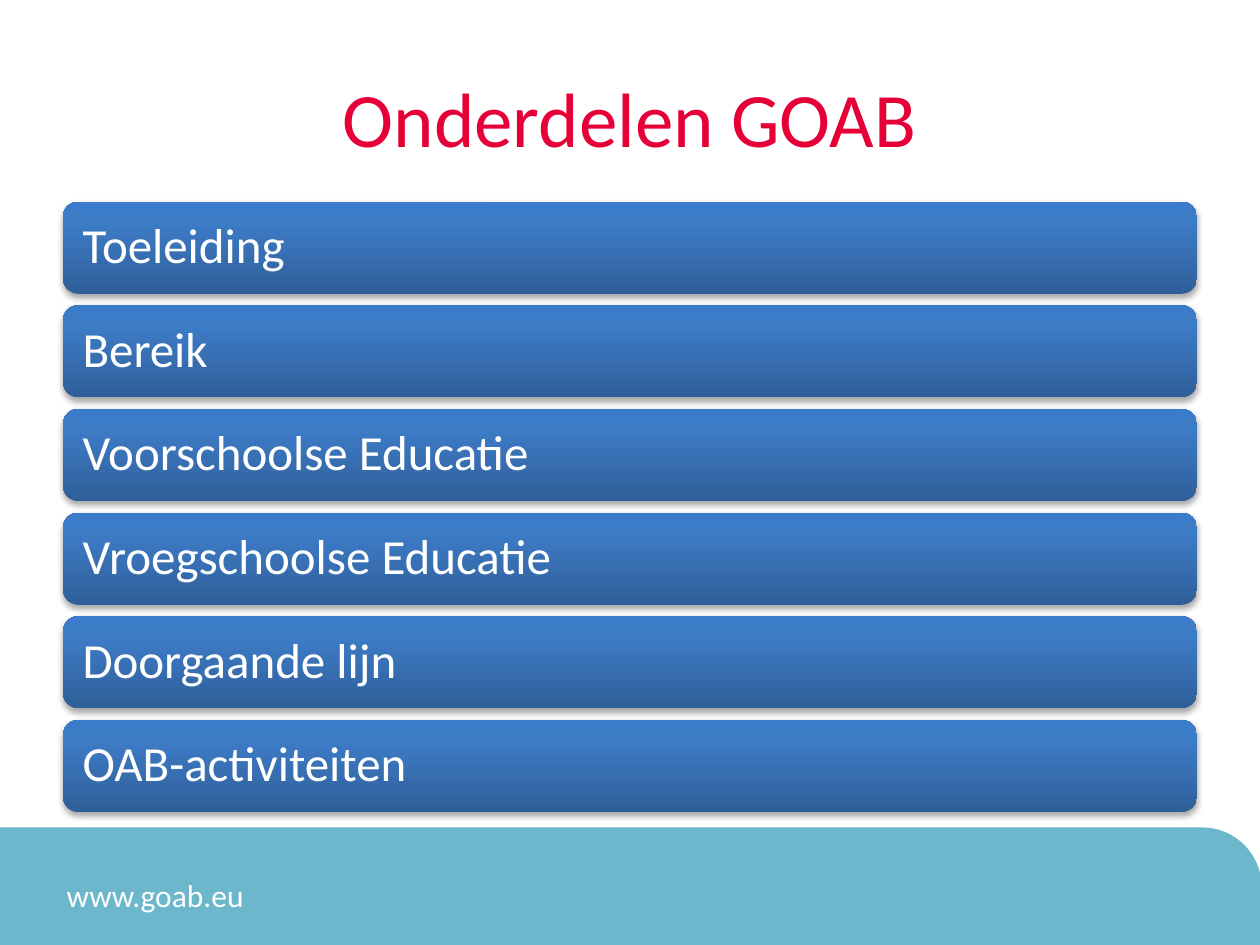
"""Build the slide that lists the parts of GOAB as stacked bars."""
from copy import deepcopy
from dataclasses import dataclass

from lxml import etree
from pptx import Presentation
from pptx.dml import color
from pptx.enum import shapes, text
from pptx.oxml import ns
from pptx.util import Pt

FONT = "Calibri"
WHITE, RED, TEAL = "FFFFFF", "E60038", "6CB7CB"
GRADIENT = ((0, "2F5F99"), (0.8, "3D7CC7"), (1, "3A7CCB"))
PARTS = ("Toeleiding", "Bereik", "Voorschoolse Educatie",
         "Vroegschoolse Educatie", "Doorgaande lijn", "OAB-activiteiten")
BAR_TOP, BAR_PITCH, BAR_HEIGHT = 115.2, 59.24, 52.7


@dataclass
class Box:
    left: float
    top: float
    width: float
    height: float

    def emu(self) -> tuple:
        return tuple(Pt(v) for v in (self.left, self.top, self.width, self.height))


@dataclass
class Label:
    words: str
    size: float
    hue: str
    align: text.PP_ALIGN = text.PP_ALIGN.LEFT
    anchor: text.MSO_ANCHOR = text.MSO_ANCHOR.MIDDLE
    inset: float = 7.2
    spacing: float = 1.0


def rgb(value: str) -> color.RGBColor:
    return color.RGBColor.from_string(value)


def write(sp, label: Label) -> None:
    tf = sp.text_frame
    tf.word_wrap = True
    tf.vertical_anchor = label.anchor
    tf.margin_left = tf.margin_right = Pt(label.inset)
    p = tf.paragraphs[0]
    p.text = label.words
    p.alignment = label.align
    p.line_spacing = label.spacing
    p.font.name, p.font.size = FONT, Pt(label.size)
    p.font.color.rgb = rgb(label.hue)


def add_text(s, box: Box, label: Label) -> None:
    write(s.shapes.add_textbox(*box.emu()), label)


def fill_gradient(sp) -> None:
    sp.fill.gradient()
    sp.fill.gradient_angle = 90
    stop_list = sp.element.spPr.find(".//" + ns.qn("a:gsLst"))
    stop_list.append(deepcopy(stop_list[0]))
    for stop, (position, hue) in zip(sp.fill.gradient_stops, GRADIENT):
        stop.position = position
        stop.color.rgb = rgb(hue)


def add_shadow(sp) -> None:
    sp.shadow.inherit = False
    effects = sp.element.spPr.find(ns.qn("a:effectLst"))
    outer = etree.SubElement(effects, ns.qn("a:outerShdw"), blurRad=str(Pt(3.15)),
                             dist=str(Pt(1.8)), dir="5400000", rotWithShape="0")
    black = etree.SubElement(outer, ns.qn("a:srgbClr"), val="000000")
    etree.SubElement(black, ns.qn("a:alpha"), val="35000")


def add_bar(s, box: Box, label: Label) -> None:
    sp = s.shapes.add_shape(shapes.MSO_SHAPE.ROUNDED_RECTANGLE, *box.emu())
    fill_gradient(sp)
    sp.line.fill.background()
    add_shadow(sp)
    write(sp, label)


def add_footer(s) -> None:
    band = s.shapes.add_shape(shapes.MSO_SHAPE.ROUND_1_RECTANGLE,
                              *Box(0, 473.8, 720, 66.2).emu())
    band.adjustments[0] = 0.5
    band.shadow.inherit = False
    band.fill.solid()
    band.fill.fore_color.rgb = band.line.color.rgb = rgb(TEAL)
    band.line.width = Pt(2)
    add_text(s, Box(31, 496.8, 147.6, 29),
             Label("www.goab.eu", 18, WHITE, anchor=text.MSO_ANCHOR.TOP))


def main() -> None:
    prs = Presentation()
    prs.slide_width, prs.slide_height = Pt(720), Pt(540)
    s = prs.slides.add_slide(prs.slide_layouts[6])
    add_footer(s)
    add_text(s, Box(36, 21.6, 648, 90),
             Label("Onderdelen GOAB", 44, RED, text.PP_ALIGN.CENTER))
    for i, part in enumerate(PARTS):
        add_bar(s, Box(36, BAR_TOP + i * BAR_PITCH, 648, BAR_HEIGHT),
                Label(part, 28, WHITE, inset=8.64, spacing=0.9))
    prs.save("out.pptx")


if __name__ == "__main__":
    main()
